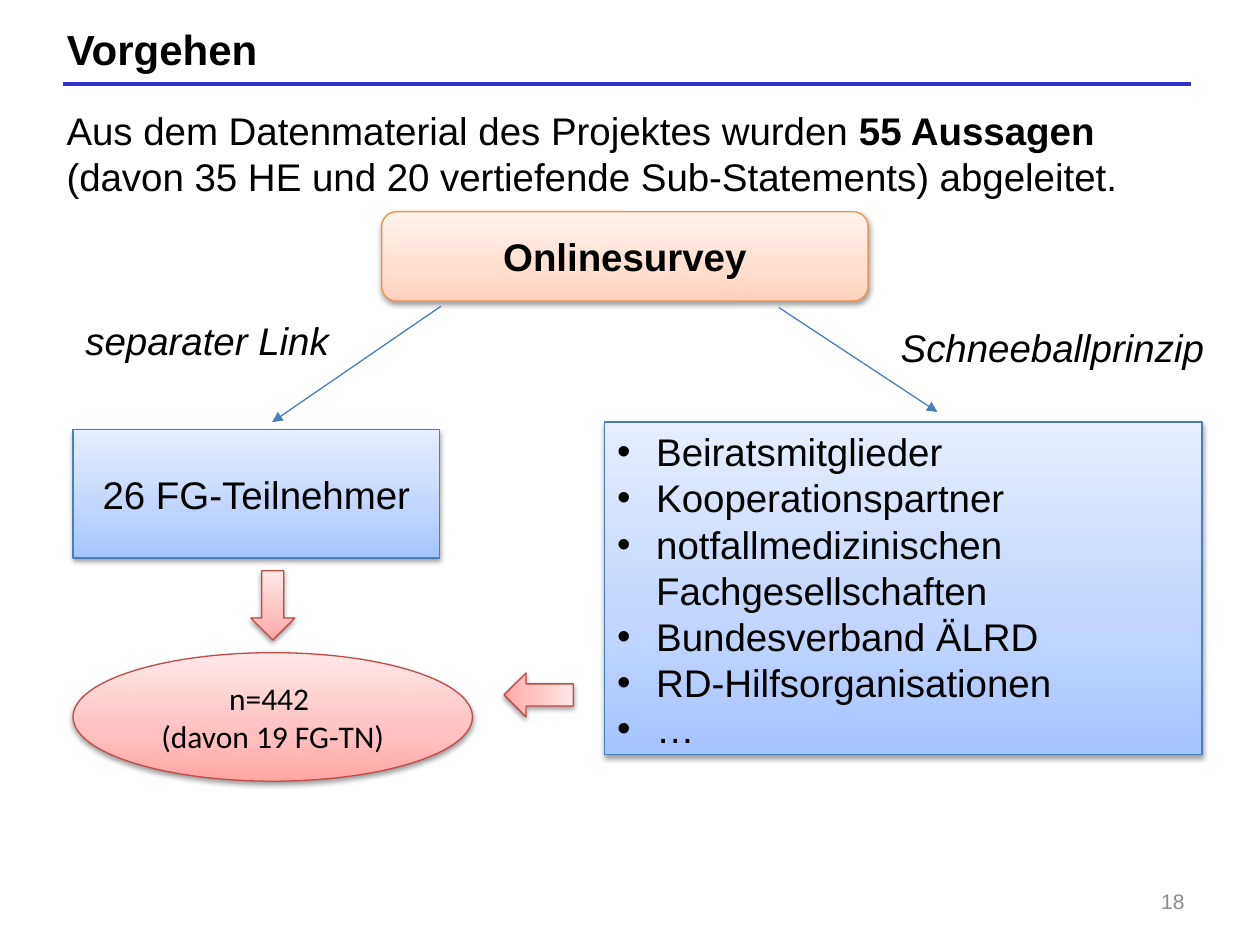
from dataclasses import dataclass, field
from typing import Any

from lxml.etree import SubElement
from pptx import Presentation
from pptx.dml.color import RGBColor
from pptx.enum.shapes import MSO_CONNECTOR as CONN, MSO_SHAPE as SHAPE
from pptx.enum.text import MSO_ANCHOR as ANCHOR, MSO_AUTO_SIZE as AUTO, PP_ALIGN as ALIGN
from pptx.oxml.ns import qn
from pptx.util import Inches, Pt

COLORS = {"text": "000000", "rule": "3333CC", "muted": "8C8C8C", "arrow": "4B7EBC"}
THEMES = {
    "orange": ("F69240", ("FFD2BD", "FFDED0", "FFF2ED")),
    "blue": ("4B7EBC", ("A4C4FF", "BFD4FF", "E6EEFF")),
    "red": ("BF4C48", ("FFA6A5", "FFC0BF", "FFE7E7")),
}
STOPS = (0, 35, 100)
INDENT = 0.31


def add_color(parent, value):
    """Append an sRGB colour element and return it."""
    return SubElement(parent, qn("a:srgbClr"), val=value)


def write(tf, *paragraphs, size=22, font="Arial", color="text", bold=False, italic=False,
          align=ALIGN.LEFT, anchor=ANCHOR.TOP, wrap=True, bullet=None):
    """Fill a text frame; a paragraph is a string or a list of (text, bold) runs."""
    tf.word_wrap = wrap
    tf.auto_size = AUTO.NONE
    tf.vertical_anchor = anchor
    for i, runs in enumerate(paragraphs):
        p = tf.add_paragraph() if i else tf.paragraphs[0]
        p.alignment = align
        if bullet:
            pPr = p._p.get_or_add_pPr()
            pPr.set("marL", str(Inches(INDENT)))
            pPr.set("indent", str(-Inches(INDENT)))
            SubElement(pPr, qn("a:buFont"), typeface="Arial")
            SubElement(pPr, qn("a:buChar"), char=bullet)
        for text, strong in [(runs, bold)] if isinstance(runs, str) else runs:
            r = p.add_run()
            r.text = text
            f = r.font
            f.name, f.size, f.bold, f.italic = font, Pt(size), strong, italic
            f.color.rgb = RGBColor.from_string(COLORS[color])


@dataclass
class Deck:
    """Style and current slide, measured on a grid of 100 columns by 75 rows."""
    prs: Any = field(default_factory=Presentation)
    s: Any = None
    cell: int = Inches(0.1)

    def grid(self, *values):
        """Turn grid units into slide lengths."""
        return [round(v * self.cell) for v in values]

    def new_slide(self, title, box):
        """Add a title-only slide and place its title."""
        self.prs.slide_width, self.prs.slide_height = self.grid(100, 75)
        self.s = self.prs.slides.add_slide(self.prs.slide_layouts[5])
        sp = self.s.shapes.title
        sp.left, sp.top, sp.width, sp.height = self.grid(*box)
        write(sp.text_frame, title, size=24, bold=True, wrap=False)

    def text(self, box, *paragraphs, **fmt):
        """Add a text box."""
        sp = self.s.shapes.add_textbox(*self.grid(*box))
        write(sp.text_frame, *paragraphs, **fmt)

    def shape(self, kind, box, theme, *paragraphs, rotation=0, **fmt):
        """Add a preset shape with gradient, outline and soft shadow."""
        sp = self.s.shapes.add_shape(kind, *self.grid(*box))
        sp.rotation = rotation
        line, shades = THEMES[theme]
        sp.fill.gradient()
        sp.fill.gradient_angle = 90
        spPr = sp._element.spPr
        stops = spPr.find(".//" + qn("a:gsLst"))
        for gs in list(stops):
            stops.remove(gs)
        for pos, shade in zip(STOPS, shades):
            add_color(SubElement(stops, qn("a:gs"), pos=str(pos * 1000)), shade)
        sp.line.color.rgb = RGBColor.from_string(line)
        sp.line.width = Pt(0.75)
        sp.shadow.inherit = False
        shadow = SubElement(spPr.find(qn("a:effectLst")), qn("a:outerShdw"),
                            blurRad=str(Pt(3.1)), dist=str(Pt(1.6)),
                            dir="5400000", rotWithShape="0")
        SubElement(add_color(shadow, "000000"), qn("a:alpha"), val="38000")
        if paragraphs:
            write(sp.text_frame, *paragraphs, **fmt)

    def line(self, start, end, color, width=0.75, arrow=False):
        """Add a straight line, with an arrowhead at its end if asked."""
        c = self.s.shapes.add_connector(CONN.STRAIGHT, *self.grid(*start, *end))
        c.line.color.rgb = RGBColor.from_string(COLORS[color])
        c.line.width = Pt(width)
        if arrow:
            SubElement(c.line._get_or_add_ln(), qn("a:tailEnd"), type="triangle")
        SubElement(c._element.spPr, qn("a:effectLst"))


def main():
    """Build the survey procedure slide."""
    deck = Deck()
    centred = {"align": ALIGN.CENTER, "anchor": ANCHOR.MIDDLE}
    deck.new_slide("Vorgehen", (4.3, 1.4, 17.3, 5))
    deck.line((5, 6.7), (94.5, 6.7), "rule", width=2.25)
    deck.text((71.7, 69.5, 23.3, 4), "18", size=12, color="muted",
              align=ALIGN.RIGHT, anchor=ANCHOR.MIDDLE)
    deck.text((4.3, 8, 87.4, 8.5), [
        ("Aus dem Datenmaterial des Projektes wurden ", False),
        ("55 Aussagen", True),
        (" (davon 35 HE und 20 vertiefende Sub-Statements) abgeleitet.", False)])

    deck.shape(SHAPE.ROUNDED_RECTANGLE, (30.3, 16.8, 38.6, 7.1), "orange",
               "Onlinesurvey", bold=True, **centred)
    deck.shape(SHAPE.RECTANGLE, (5.8, 34.1, 29.1, 10.2), "blue", "26 FG-Teilnehmer", **centred)
    deck.shape(SHAPE.RECTANGLE, (48, 33.5, 47.4, 26.4), "blue",
               "Beiratsmitglieder", "Kooperationspartner",
               "notfallmedizinischen Fachgesellschaften", "Bundesverband ÄLRD",
               "RD-Hilfsorganisationen", "…", bullet="•")

    deck.line((35, 24.3), (21.6, 33.5), "arrow", arrow=True)
    deck.line((61.8, 24.4), (74.4, 32.7), "arrow", arrow=True)
    deck.text((70.5, 25.2, 26.4, 4.7), "Schneeballprinzip", italic=True, wrap=False)
    deck.text((5.8, 24.7, 21.6, 4.7), "separater Link", italic=True, wrap=False)

    deck.shape(SHAPE.OVAL, (5.8, 51.8, 31.7, 10.2), "red",
               "n=442 ", "(davon 19 FG-TN)", size=18, font="Calibri", **centred)
    for left, top, rotation in ((19.9, 45.3, 0), (41, 52.4, 90)):
        deck.shape(SHAPE.DOWN_ARROW, (left, top, 3.5, 5.5), "red", rotation=rotation)
    deck.prs.save("out.pptx")


if __name__ == "__main__":
    main()
